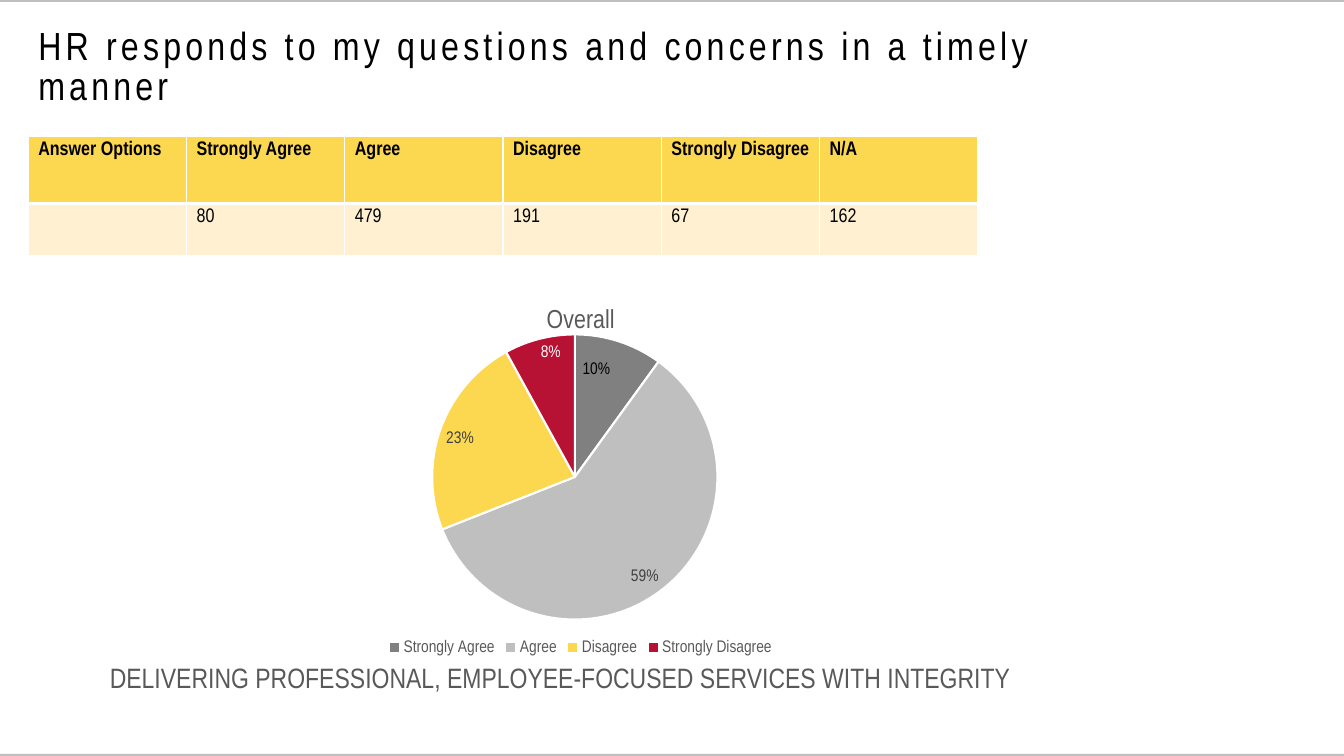
from lxml.etree import SubElement
from pptx import Presentation
from pptx.chart.data import CategoryChartData
from pptx.dml.color import RGBColor
from pptx.enum.chart import XL_CHART_TYPE, XL_LABEL_POSITION, XL_LEGEND_POSITION
from pptx.enum.shapes import MSO_SHAPE
from pptx.enum.text import MSO_ANCHOR, PP_ALIGN
from pptx.oxml import parse_xml
from pptx.oxml.ns import nsdecls, qn
from pptx.util import Inches, Pt

FONT = "Arial Narrow"
TITLE = "HR responds to my questions and concerns in a timely manner"
MOTTO = "DELIVERING PROFESSIONAL, EMPLOYEE-FOCUSED SERVICES WITH INTEGRITY"
ROWS = [
    ("Answer Options", "Strongly Agree", "Agree", "Disagree", "Strongly Disagree", "N/A"),
    ("", "80", "479", "191", "67", "162"),
]
ROW_FILLS = ["FCD750", "FEF0D0"]
ROW_HEIGHTS = [0.67, 0.52]
COL_WIDTH = 1.57
SLICES = [
    ("Strongly Agree", 10, "808080"),
    ("Agree", 59, "BFBFBF"),
    ("Disagree", 23, "FCD750"),
    ("Strongly Disagree", 8, "B71234"),
]
LABEL_COLORS = {0: "000000", 3: "FFFFFF"}
PLOT = {"x": 0.126, "y": 0.122, "w": 0.731, "h": 0.771}


def rgb(color):
    return RGBColor.from_string(color)


def style(font, size, color, bold=False):
    font.name, font.size, font.bold = FONT, Pt(size), bold
    font.color.rgb = rgb(color)


def write(tf, text, size=14, color="000000", bold=False, line=None, spacing=None):
    p = tf.paragraphs[0]
    p.alignment = PP_ALIGN.LEFT
    if line:
        p.line_spacing = line
    if text:
        r = p.add_run()
        r.text = text
        style(r.font, size, color, bold)
        if spacing:
            r.font._element.set("spc", str(spacing * 100))
    else:
        style(p.font, size, color, bold)


def border(cell, side, width):
    tcPr = cell._tc.get_or_add_tcPr()
    ln = SubElement(tcPr, qn(f"a:ln{side}"), w=str(Pt(width)))
    fill = SubElement(ln, qn("a:solidFill"))
    SubElement(fill, qn("a:srgbClr"), val="FFFFFF")


def layout(modes, box):
    parts = [f'<c:{k} val="{v}"/>' for k, v in [*modes.items(), *box.items()]]
    return parse_xml(f'<c:layout {nsdecls("c")}><c:manualLayout>{"".join(parts)}'
                     '</c:manualLayout></c:layout>')


def add_bars(s):
    for top in (0, 7.48):
        sp = s.shapes.add_shape(MSO_SHAPE.RECTANGLE, 0, Inches(top), Inches(13.33), Inches(0.02))
        sp.shadow.inherit = False
        sp.fill.solid()
        sp.fill.fore_color.rgb = rgb("BFBFBF")
        sp.line.fill.background()


def add_title(s):
    sp = s.shapes.title
    sp.left, sp.top, sp.width, sp.height = map(Inches, (0.28, 0.15, 10.24, 1.05))
    tf = sp.text_frame
    tf.word_wrap = True
    tf.vertical_anchor = MSO_ANCHOR.MIDDLE
    write(tf, TITLE, size=28, line=0.85, spacing=3)


def add_pie(s):
    data = CategoryChartData()
    data.categories = [name for name, _, _ in SLICES]
    data.add_series("Series 1", [value for _, value, _ in SLICES])
    chart = s.shapes.add_chart(XL_CHART_TYPE.PIE, Inches(2.32), Inches(2.87),
                               Inches(6.88), Inches(3.67), data).chart
    style(chart.font, 10, "000000")
    chart.has_title = True
    p = chart.chart_title.text_frame.paragraphs[0]
    r = p.add_run()
    r.text = "Overall"
    style(r.font, 18.6, "595959")
    chart.has_legend = True
    chart.legend.position = XL_LEGEND_POSITION.BOTTOM
    chart.legend.include_in_layout = False
    style(chart.legend.font, 12, "595959")

    plot = chart.plots[0]
    plot.vary_by_categories = True
    area = plot._element.getparent()
    for old in area.findall(qn("c:layout")):
        area.remove(old)
    area.insert(0, layout({"layoutTarget": "inner", "xMode": "edge", "yMode": "edge"}, PLOT))

    series = plot.series[0]
    labels = series.data_labels
    labels.show_percentage, labels.show_value = True, False
    labels.number_format, labels.number_format_is_linked = "0%", False
    labels.position = XL_LABEL_POSITION.INSIDE_END
    style(labels.font, 12, "404040")
    for i, (_, _, color) in enumerate(SLICES):
        point = series.points[i]
        point.format.fill.solid()
        point.format.fill.fore_color.rgb = rgb(color)
        point.format.line.color.rgb = rgb("FFFFFF")
        point.format.line.width = Pt(1.5)
    for i, color in LABEL_COLORS.items():
        label = series.points[i].data_label
        style(label.font, 12, color)
        label.position = XL_LABEL_POSITION.INSIDE_END
    for dLbl in labels._element.findall(qn("c:dLbl")):
        dLbl.find(qn("c:showVal")).set("val", "0")
        dLbl.find(qn("c:showPercent")).set("val", "1")
        if dLbl.find(qn("c:idx")).get("val") == "0":
            dLbl.insert(1, layout({}, {"x": -0.01, "y": 0.04}))


def add_answers(s):
    cols = len(ROWS[0])
    table = s.shapes.add_table(len(ROWS), cols, Inches(0.28), Inches(1.35),
                               Inches(COL_WIDTH * cols), Inches(sum(ROW_HEIGHTS))).table
    for col in table.columns:
        col.width = Inches(COL_WIDTH)
    for i, texts in enumerate(ROWS):
        table.rows[i].height = Inches(ROW_HEIGHTS[i])
        for j, text in enumerate(texts):
            cell = table.cell(i, j)
            write(cell.text_frame, text, bold=i == 0)
            for side, width in zip("LRTB", (1, 1, 3 if i else 1, 1 if i else 3)):
                border(cell, side, width)
            cell.fill.solid()
            cell.fill.fore_color.rgb = rgb(ROW_FILLS[i])


def add_motto(s):
    tf = s.shapes.add_textbox(*map(Inches, (0.99, 6.54, 9.59, 0.73))).text_frame
    tf.word_wrap = True
    write(tf, MOTTO, size=20, color="595959", line=0.9)


def main():
    prs = Presentation()
    prs.slide_width, prs.slide_height = Inches(13.33), Inches(7.5)
    s = prs.slides.add_slide(prs.slide_layouts[5])
    add_bars(s)
    add_title(s)
    add_pie(s)
    add_answers(s)
    add_motto(s)
    prs.save("out.pptx")


if __name__ == "__main__":
    main()
